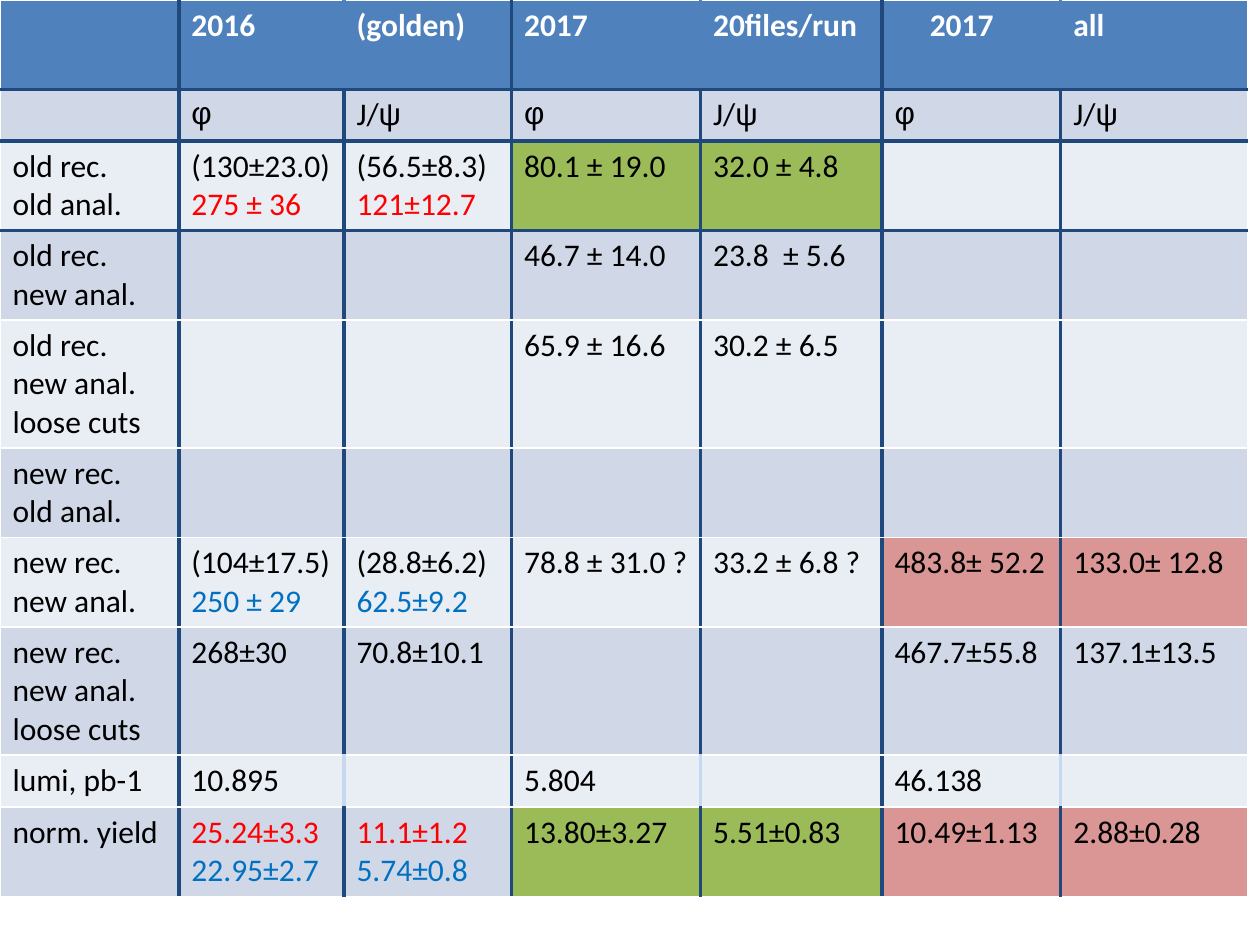
from dataclasses import dataclass

from lxml import etree
from pptx import Presentation
from pptx.dml.color import RGBColor
from pptx.oxml.ns import qn
from pptx.table import _Cell
from pptx.util import Inches, Pt

COLORS = {
    "header": "4F81BD", "dark_band": "D0D8E8", "light_band": "E9EDF4",
    "green": "9BBB59", "rose": "D99694", "navy": "1F497D", "pale": "C6D9F1",
    "white": "FFFFFF", "black": "000000", "red": "FF0000", "blue": "0070C0",
}
COLUMN_WIDTHS = [1.42, 1.31, 1.33, 1.5, 1.44, 1.42, 1.48]
ROW_HEIGHTS = [0.71, 0.41, 0.71, 0.71, 1.01, 0.71, 0.71, 1.01, 0.41, 0.71]
LUMINOSITY_ROW = 8
LAST_NAVY_ROW = 2
GREEK = "φψ"


@dataclass(frozen=True)
class Entry:
    text: str = ""
    fill: str = ""
    colors: tuple[str, ...] = ()
    indent: float = 0


@dataclass(frozen=True)
class Border:
    color: str
    width: float


EMPTY = Entry()
PHI = Entry("φ")
PSI = Entry("J/ψ")
BLACK_RED = ("black", "red")
BLACK_BLUE = ("black", "blue")
RED_BLUE = ("red", "blue")

ROWS = [
    [EMPTY, Entry("2016"), Entry("(golden)"), Entry("2017"),
     Entry("20files/run"), Entry("2017", indent=0.28), Entry("all")],
    [EMPTY, PHI, PSI, PHI, PSI, PHI, PSI],
    [Entry("old rec.\nold anal."),
     Entry("(130±23.0)\n275 ± 36", colors=BLACK_RED),
     Entry("(56.5±8.3)\n121±12.7", colors=BLACK_RED),
     Entry("80.1 ± 19.0", "green"), Entry("32.0 ± 4.8", "green"), EMPTY, EMPTY],
    [Entry("old rec.\nnew anal."), EMPTY, EMPTY,
     Entry("46.7 ± 14.0"), Entry("23.8  ± 5.6"), EMPTY, EMPTY],
    [Entry("old rec.\nnew anal. loose cuts"), EMPTY, EMPTY,
     Entry("65.9 ± 16.6"), Entry("30.2 ± 6.5"), EMPTY, EMPTY],
    [Entry("new rec.\nold anal."), EMPTY, EMPTY, EMPTY, EMPTY, EMPTY, EMPTY],
    [Entry("new rec.\nnew anal."),
     Entry("(104±17.5)\n250 ± 29", colors=BLACK_BLUE),
     Entry("(28.8±6.2)\n62.5±9.2", colors=BLACK_BLUE),
     Entry("78.8 ± 31.0 ?"), Entry("33.2 ± 6.8 ?"),
     Entry("483.8± 52.2", "rose"), Entry("133.0± 12.8", "rose")],
    [Entry("new rec.\nnew anal.\nloose cuts"), Entry("268±30"),
     Entry("70.8±10.1"), EMPTY, EMPTY, Entry("467.7±55.8"), Entry("137.1±13.5")],
    [Entry("lumi, pb-1"), Entry("10.895"), EMPTY, Entry("5.804"), EMPTY,
     Entry("46.138"), EMPTY],
    [Entry("norm. yield"),
     Entry("25.24±3.3\n22.95±2.7", colors=RED_BLUE),
     Entry("11.1±1.2\n5.74±0.8", colors=RED_BLUE),
     Entry("13.80±3.27", "green"), Entry("5.51±0.83", "green"),
     Entry("10.49±1.13", "rose"), Entry("2.88±0.28", "rose")],
]


def rgb(name: str) -> RGBColor:
    return RGBColor.from_string(COLORS[name])


def write_text(cell: _Cell, text: str, *, colors: tuple[str, ...],
               size: float = 18, bold: bool = False) -> None:
    frame = cell.text_frame
    for index, line in enumerate(text.split("\n")):
        para = frame.paragraphs[0] if index == 0 else frame.add_paragraph()
        para.font.size = Pt(size)
        greek_start = next((i for i, letter in enumerate(line) if letter in GREEK), len(line))
        for part, font in ((line[:greek_start], "Calibri"), (line[greek_start:], "Arial")):
            if part:
                span = para.add_run()
                span.text = part
                span.font.name = font
                span.font.size = Pt(size)
                span.font.bold = bold
                span.font.color.rgb = rgb(colors[min(index, len(colors) - 1)])


def vertical_edge(row: int, edge: int) -> Border:
    if edge in (0, len(COLUMN_WIDTHS)):
        return Border("white", 1)
    inside_pair = edge % 2 == 0
    if inside_pair and row == 0:
        return Border("header", 2.25)
    if inside_pair and row == LUMINOSITY_ROW:
        return Border("pale", 2.25)
    return Border("navy", 2.25)


def horizontal_edge(edge: int) -> Border:
    if 1 <= edge <= LAST_NAVY_ROW + 1:
        return Border("navy", 2.25)
    return Border("white", 1)


def set_borders(cell: _Cell, row: int, column: int) -> None:
    borders = {
        "a:lnL": vertical_edge(row, column),
        "a:lnR": vertical_edge(row, column + 1),
        "a:lnT": horizontal_edge(row),
        "a:lnB": horizontal_edge(row + 1),
    }
    properties = cell._tc.get_or_add_tcPr()
    for position, (tag, border) in enumerate(borders.items()):
        line = etree.Element(qn(tag), w=str(Pt(border.width)))
        fill = etree.SubElement(line, qn("a:solidFill"))
        etree.SubElement(fill, qn("a:srgbClr"), val=COLORS[border.color])
        properties.insert(position, line)


def fill_cell(cell: _Cell, entry: Entry, row: int, column: int) -> None:
    is_header = row == 0
    band = "header" if is_header else ("light_band", "dark_band")[row % 2]
    cell.fill.solid()
    cell.fill.fore_color.rgb = rgb(entry.fill or band)
    cell.margin_left = Inches(0.1 + entry.indent)
    default = ("white",) if is_header else ("black",)
    write_text(cell, entry.text, colors=entry.colors or default, bold=is_header)
    set_borders(cell, row, column)


def main() -> None:
    deck = Presentation()
    deck.slide_width = Inches(10)
    deck.slide_height = Inches(7.5)
    page = deck.slides.add_slide(deck.slide_layouts[6])
    table = page.shapes.add_table(
        len(ROW_HEIGHTS), len(COLUMN_WIDTHS), Inches(0), Inches(0),
        Inches(sum(COLUMN_WIDTHS)), Inches(sum(ROW_HEIGHTS))).table
    table.horz_banding = False
    for column, width in zip(table.columns, COLUMN_WIDTHS):
        column.width = Inches(width)
    for row, height in zip(table.rows, ROW_HEIGHTS):
        row.height = Inches(height)
    for row, entries in enumerate(ROWS):
        for column, entry in enumerate(entries):
            fill_cell(table.cell(row, column), entry, row, column)
    deck.save("out.pptx")


if __name__ == "__main__":
    main()
